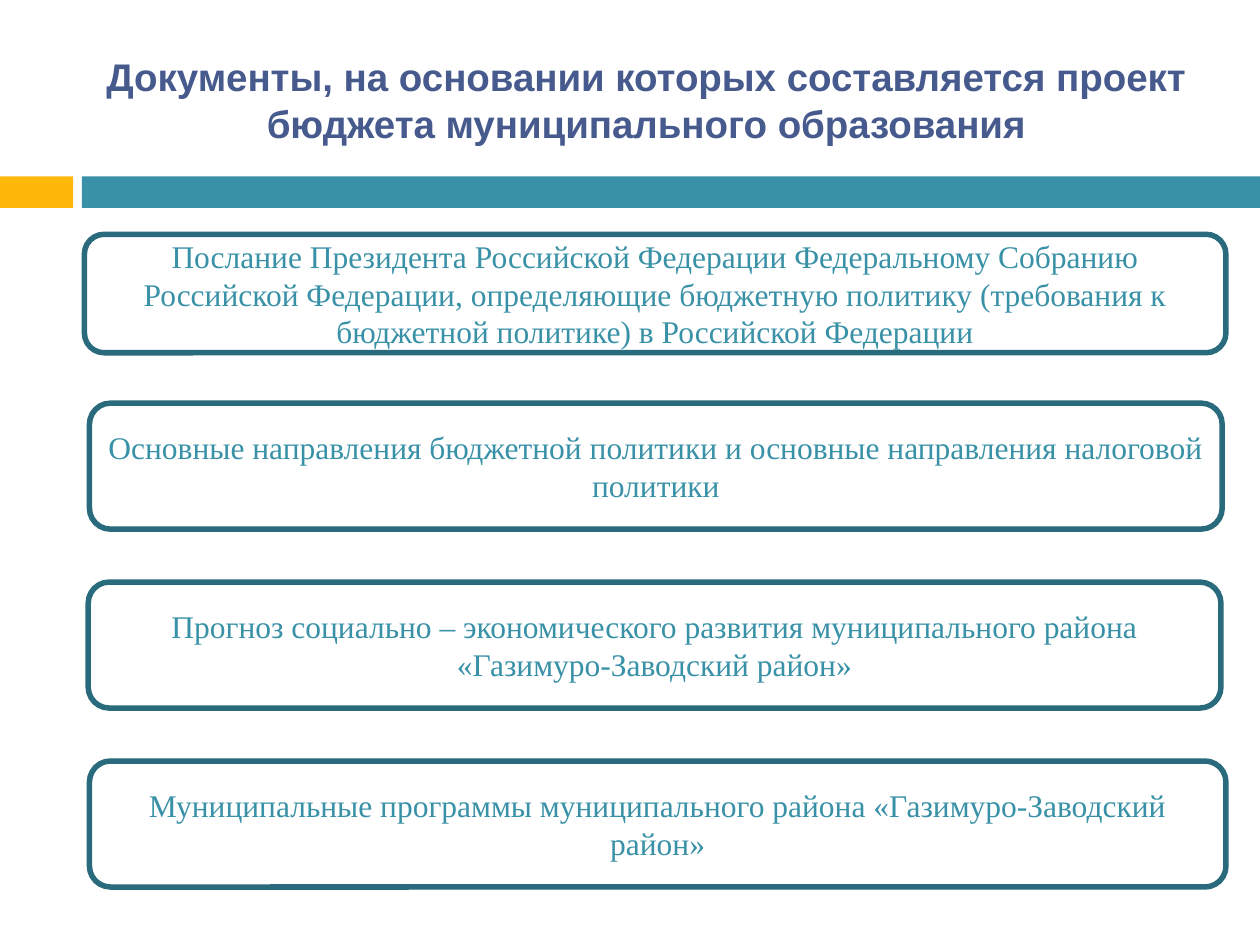
from dataclasses import dataclass

from pptx import Presentation
from pptx import util as u
from pptx.dml.color import RGBColor
from pptx.enum import shapes, text

WHITE = RGBColor(0xFF, 0xFF, 0xFF)
AMBER = RGBColor(0xFE, 0xB8, 0x0A)
TEAL = RGBColor(0x38, 0x91, 0xA7)
DARK_TEAL = RGBColor(0x29, 0x6B, 0x7C)
INDIGO = RGBColor(0x47, 0x5A, 0x8D)

SLIDE_WIDTH = u.Inches(10)
SLIDE_HEIGHT = u.Inches(7.5)
ROW_TOP = 1.78
ROW_PITCH = 1.42


@dataclass(frozen=True)
class Box:
    left: float
    top: float
    width: float
    height: float


@dataclass(frozen=True)
class Document:
    wording: str
    left: float = 0.71
    width: float = 8.99
    height: float = 1.0
    offset: float = 0.0


TITLE = "Документы, на основании которых составляется проект бюджета муниципального образования"
TITLE_BOX = Box(0.67, 0.25, 8.92, 1.08)
BANDS = [
    (Box(0, 1.4, 0.58, 0.25), AMBER),
    (Box(0.65, 1.4, 9.35, 0.25), TEAL),
]
DOCUMENTS = [
    Document(
        "Послание Президента Российской Федерации Федеральному Собранию "
        "Российской Федерации, определяющие бюджетную политику (требования к "
        "бюджетной политике) в Российской Федерации",
        left=0.67, width=9.06, height=0.94, offset=0.08,
    ),
    Document("Основные направления бюджетной политики и основные направления налоговой политики"),
    Document(
        "Прогноз социально – экономического развития муниципального района "
        "«Газимуро-Заводский район»",
        left=0.7,
    ),
    Document(
        "Муниципальные программы муниципального района «Газимуро-Заводский район»",
        width=9.02,
    ),
]


def place(shape, box: Box) -> None:
    shape.left, shape.top = u.Inches(box.left), u.Inches(box.top)
    shape.width, shape.height = u.Inches(box.width), u.Inches(box.height)


def write(shape, wording: str, *, font: str, size: float, color: RGBColor, bold: bool = False) -> None:
    frame = shape.text_frame
    frame.word_wrap = True
    frame.auto_size = text.MSO_AUTO_SIZE.NONE
    frame.vertical_anchor = text.MSO_ANCHOR.MIDDLE
    paragraph = frame.paragraphs[0]
    paragraph.alignment = text.PP_ALIGN.CENTER
    run = paragraph.add_run()
    run.text = wording
    run.font.name = font
    run.font.size = u.Pt(size)
    run.font.bold = bold
    run.font.color.rgb = color


def draw_shape(slide, kind: shapes.MSO_SHAPE, box: Box, fill: RGBColor, line: RGBColor | None = None):
    shape = slide.shapes.add_shape(kind, 0, 0, 0, 0)
    place(shape, box)
    shape.shadow.inherit = False
    shape.fill.solid()
    shape.fill.fore_color.rgb = fill
    if line is None:
        shape.line.fill.background()
    else:
        shape.line.color.rgb = line
        shape.line.width = u.Pt(3.15)
    return shape


def draw_document(slide, row: int, document: Document) -> None:
    top = ROW_TOP + row * ROW_PITCH + document.offset
    box = Box(document.left, top, document.width, document.height)
    shape = draw_shape(slide, shapes.MSO_SHAPE.ROUNDED_RECTANGLE, box, WHITE, DARK_TEAL)
    write(shape, document.wording, font="Times New Roman", size=18, color=TEAL)


def main() -> None:
    presentation = Presentation()
    presentation.slide_width, presentation.slide_height = SLIDE_WIDTH, SLIDE_HEIGHT
    slide = presentation.slides.add_slide(presentation.slide_layouts[5])
    for box, color in BANDS:
        draw_shape(slide, shapes.MSO_SHAPE.RECTANGLE, box, color)
    title = slide.shapes.title
    place(title, TITLE_BOX)
    write(title, TITLE, font="Arial", size=22, color=INDIGO, bold=True)
    for row, document in enumerate(DOCUMENTS):
        draw_document(slide, row, document)
    presentation.save("out.pptx")


if __name__ == "__main__":
    main()
